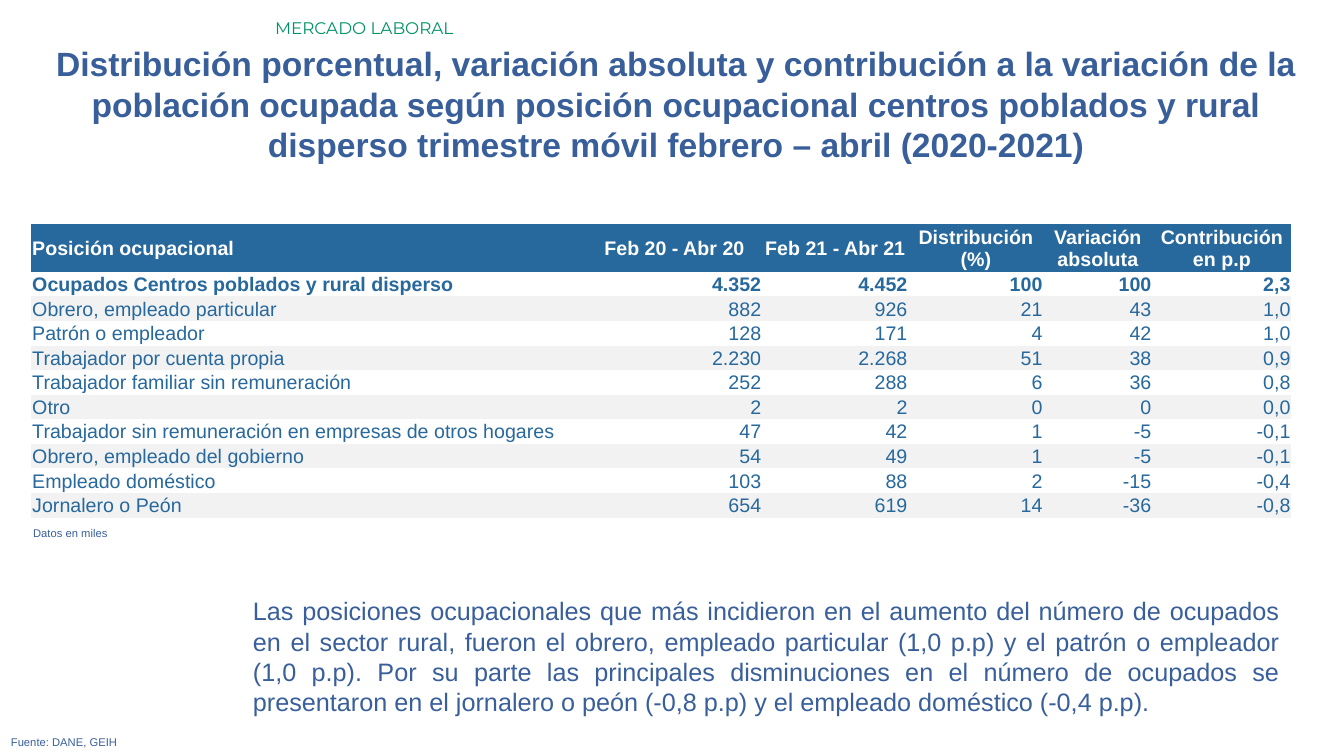
from dataclasses import dataclass

from pptx import Presentation
from pptx.dml.color import RGBColor as Rgb
from pptx.enum.text import MSO_ANCHOR as Anchor, MSO_AUTO_SIZE as Auto, PP_ALIGN as Align
from pptx.oxml.ns import qn
from pptx.util import Inches, Pt


@dataclass
class Theme:
    ink: str = "395F9B"
    green: str = "009267"
    head: str = "27689D"
    band: str = "F2F2F2"
    white: str = "FFFFFF"
    sans: str = "Arial"
    label: str = "Montserrat"
    title: int = 24
    body: int = 18
    cell: int = 14
    tag: int = 12
    note: int = 8
    plain: str = "{2D5ABB26-0587-4C30-8999-92F81FD0307C}"


class Page:
    def __init__(self, slide, theme):
        self.slide = slide
        self.theme = theme

    def add_run(self, frame, text, size, color, align, bold=False, face=None):
        para = frame.paragraphs[0]
        para.alignment = align
        run = para.add_run()
        run.text = text
        font = run.font
        font.name = face or self.theme.sans
        font.size = Pt(size)
        font.bold = bold
        font.color.rgb = Rgb.from_string(color)

    def text(self, box, text, size, align, color=None, bold=False, face=None):
        shape = self.slide.shapes.add_textbox(*map(Inches, box))
        frame = shape.text_frame
        frame.word_wrap = True
        frame.auto_size = Auto.SHAPE_TO_FIT_TEXT
        self.add_run(frame, text, size, color or self.theme.ink, align, bold, face)

    def cell(self, cell, text, fill, color, align, bold):
        cell.margin_left = cell.margin_right = cell.margin_top = Inches(0.01)
        cell.margin_bottom = 0
        cell.vertical_anchor = Anchor.MIDDLE
        if fill:
            cell.fill.solid()
            cell.fill.fore_color.rgb = Rgb.from_string(fill)
        else:
            cell.fill.background()
        self.add_run(cell.text_frame, text, self.theme.cell, color, align, bold)

    def table(self, box, widths, top, rows):
        theme = self.theme
        shape = self.slide.shapes.add_table(len(rows), len(widths), *map(Inches, box))
        shape.element.find(".//" + qn("a:tableStyleId")).text = theme.plain
        table = shape.table
        table.horz_banding = False
        for col, width in zip(table.columns, widths):
            col.width = Inches(width)
        step = (box[3] - top) / (len(rows) - 1)
        for r, row in enumerate(rows):
            table.rows[r].height = Inches(step if r else top)
            fill = theme.head if r == 0 else theme.band if r % 2 == 0 else None
            color = theme.head if r else theme.white
            side = Align.RIGHT if r else Align.CENTER
            for c, text in enumerate(row):
                align = side if c else Align.LEFT
                self.cell(table.cell(r, c), text, fill, color, align, r < 2)


ROWS = [
    ("Posición ocupacional", "Feb 20 - Abr 20", "Feb 21 - Abr 21",
     "Distribución (%)", "Variación absoluta", "Contribución en p.p"),
    ("Ocupados Centros poblados y rural disperso", "4.352", "4.452", "100", "100", "2,3"),
    ("Obrero, empleado particular", "882", "926", "21", "43", "1,0"),
    ("Patrón o empleador", "128", "171", "4", "42", "1,0"),
    ("Trabajador por cuenta propia", "2.230", "2.268", "51", "38", "0,9"),
    ("Trabajador familiar sin remuneración", "252", "288", "6", "36", "0,8"),
    ("Otro", "2", "2", "0", "0", "0,0"),
    ("Trabajador sin remuneración en empresas de otros hogares",
     "47", "42", "1", "-5", "-0,1"),
    ("Obrero, empleado del gobierno", "54", "49", "1", "-5", "-0,1"),
    ("Empleado doméstico", "103", "88", "2", "-15", "-0,4"),
    ("Jornalero o Peón", "654", "619", "14", "-36", "-0,8"),
]
TITLE = (
    "Distribución porcentual, variación absoluta y contribución a la variación de la "
    "población ocupada según posición ocupacional centros poblados y rural disperso "
    "trimestre móvil febrero – abril (2020-2021)"
)
BODY = (
    "Las posiciones ocupacionales que más incidieron en el aumento del número de ocupados "
    "en el sector rural, fueron el obrero, empleado particular (1,0 p.p) y el patrón o "
    "empleador (1,0 p.p). Por su parte las principales disminuciones en el número de "
    "ocupados se presentaron en el jornalero o peón (-0,8 p.p) y el empleado doméstico "
    "(-0,4 p.p)."
)


def main():
    deck = Presentation()
    deck.slide_width = Inches(13.33)
    deck.slide_height = Inches(7.5)
    theme = Theme()
    page = Page(deck.slides.add_slide(deck.slide_layouts[6]), theme)
    page.text((0.45, 0.38, 12.51, 1.31), TITLE, theme.title, Align.CENTER, bold=True)
    page.text((2.63, 0.13, 10.7, 0.3), "MERCADO LABORAL", theme.tag, Align.LEFT,
              theme.green, face=theme.label)
    page.text((2.41, 5.86, 10.38, 1.31), BODY, theme.body, Align.JUSTIFY)
    page.text((0.01, 7.25, 12.91, 0.24), "Fuente: DANE, GEIH", theme.note, Align.JUSTIFY)
    page.table((0.31, 2.22, 12.5, 2.91), (5.51, 1.74, 1.45, 1.34, 1.08, 1.38), 0.47, ROWS)
    page.text((0.23, 5.17, 12.62, 0.24), "Datos en miles", theme.note, Align.JUSTIFY)
    deck.save("out.pptx")


if __name__ == "__main__":
    main()
